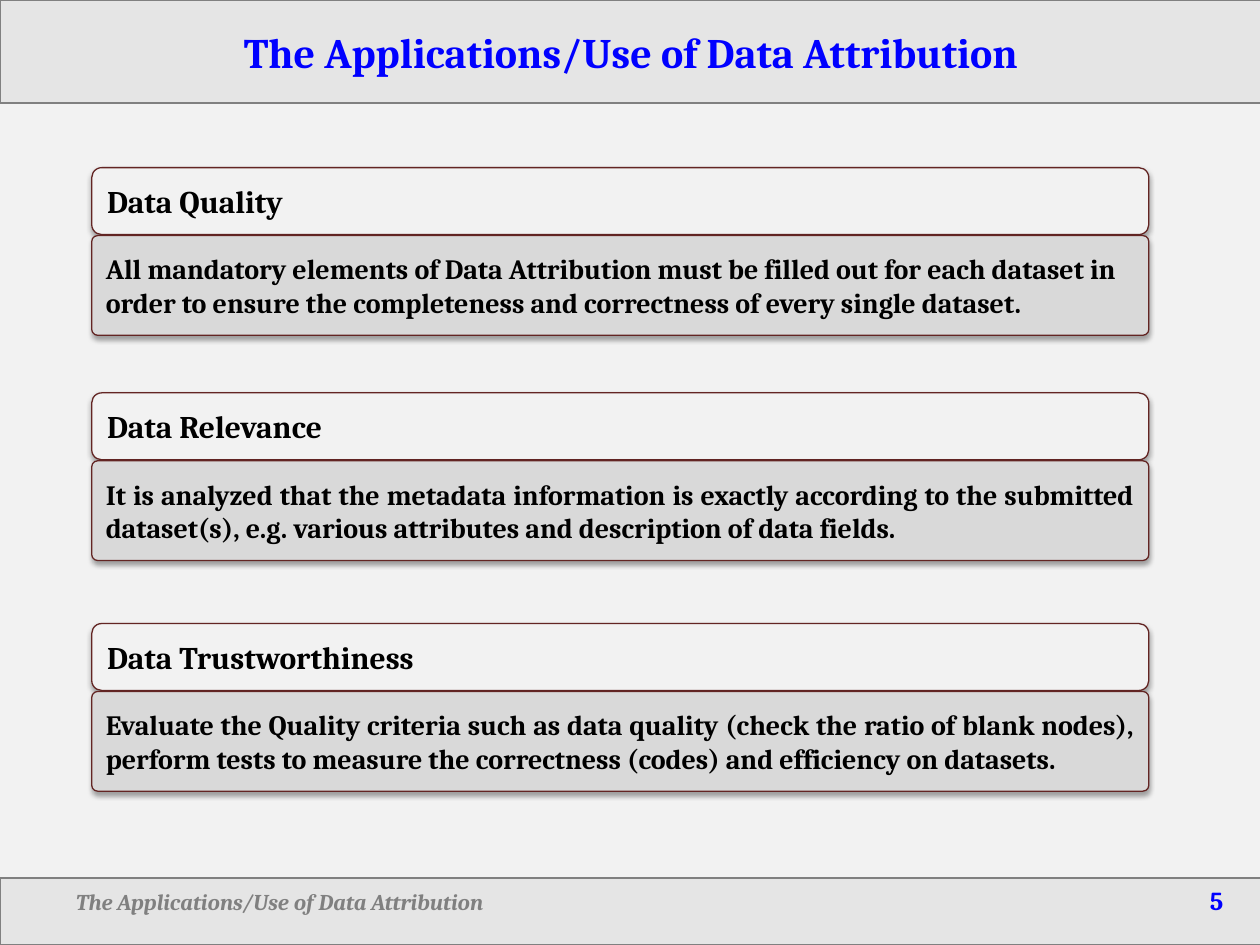
from lxml import etree
from pptx import Presentation
from pptx import util as u
from pptx.dml.color import RGBColor
from pptx.enum import shapes, text
from pptx.oxml.ns import qn

HEADING = "The Applications/Use of Data Attribution"
CRITERIA = [
    (3.38, "Data Quality", text.PP_ALIGN.LEFT,
     "All mandatory elements of Data Attribution must be filled out for each dataset in "
     "order to ensure the completeness and correctness of every single dataset."),
    (7.92, "Data Relevance", text.PP_ALIGN.JUSTIFY,
     "It is analyzed that the metadata information is exactly according to the submitted "
     "dataset(s), e.g. various attributes and description of data fields."),
    (12.57, "Data Trustworthiness", text.PP_ALIGN.JUSTIFY,
     "Evaluate the Quality criteria such as data quality (check the ratio of blank nodes), "
     "perform tests to measure the correctness (codes) and efficiency on datasets."),
]


def rgb(value):
    return RGBColor.from_string(value)


def child(parent, tag, **attributes):
    return etree.SubElement(parent, qn(tag), {k: str(v) for k, v in attributes.items()})


class Deck:
    font = "Cambria"
    band_width = 25.43
    card_left, card_width = 1.85, 21.31
    label_height, body_height, body_offset = 1.35, 2.01, 1.37

    def __init__(self):
        self.prs = Presentation()
        self.prs.slide_width, self.prs.slide_height = u.Cm(25.4), u.Cm(19.05)
        self.slide = self.prs.slides.add_slide(self.prs.slide_layouts[5])
        background = self.slide.background.fill
        background.solid()
        background.fore_color.rgb = rgb("F2F2F2")

    def style_run(self, run, size, color, italic=False):
        run.font.name = self.font
        run.font.size = u.Pt(size)
        run.font.bold = True
        run.font.italic = italic
        run.font.color.rgb = rgb(color)

    def paint(self, shape, fill, line):
        shape.shadow.inherit = False
        shape.fill.solid()
        shape.fill.fore_color.rgb = rgb(fill)
        shape.line.color.rgb = rgb(line)
        shape.line.width = u.Pt(0.75)

    def band(self, shape, top, height):
        shape.left, shape.top = u.Cm(0), u.Cm(top)
        shape.width, shape.height = u.Cm(self.band_width), u.Cm(height)
        self.paint(shape, "D9D9D9", "808080")
        color = shape.fill._xPr.find(qn("a:solidFill"))[0]
        child(color, "a:alpha", val=50000)

    def title(self, wording):
        title = self.slide.shapes.title
        self.band(title, 0, 2.08)
        frame = title.text_frame
        frame.text = wording
        frame.vertical_anchor = text.MSO_ANCHOR.MIDDLE
        frame.paragraphs[0].alignment = text.PP_ALIGN.CENTER
        self.style_run(frame.paragraphs[0].runs[0], 24, "0000FF")

    def footer(self, wording, number):
        footer = self.slide.shapes.add_shape(shapes.MSO_SHAPE.RECTANGLE, 0, 0, 0, 0)
        self.band(footer, 17.7, 1.35)
        frame = footer.text_frame
        frame.margin_left = u.Cm(1.53)
        frame.vertical_anchor = text.MSO_ANCHOR.TOP
        line = frame.paragraphs[0]
        line.alignment = text.PP_ALIGN.LEFT
        tabs = child(line._p.get_or_add_pPr(), "a:tabLst")
        child(tabs, "a:tab", pos=int(u.Cm(23.13)), algn="r")
        caption, page = line.add_run(), line.add_run()
        caption.text, page.text = wording + "\t", number
        self.style_run(caption, 12.9, "808080", italic=True)
        self.style_run(page, 14.8, "0000FF")

    def panel(self, top, height, corner, fill, wording, size, alignment):
        panel = self.slide.shapes.add_shape(
            shapes.MSO_SHAPE.ROUNDED_RECTANGLE,
            u.Cm(self.card_left), u.Cm(top), u.Cm(self.card_width), u.Cm(height))
        panel.adjustments[0] = corner
        self.paint(panel, fill, "632523")
        effects = panel._element.spPr.find(qn("a:effectLst"))
        shadow = child(effects, "a:outerShdw", blurRad=int(u.Pt(3.1)),
                       dist=int(u.Pt(1.8)), dir=5400000, rotWithShape=0)
        child(child(shadow, "a:srgbClr", val="000000"), "a:alpha", val=35000)
        frame = panel.text_frame
        frame.word_wrap = True
        frame.text = wording
        frame.vertical_anchor = text.MSO_ANCHOR.MIDDLE
        frame.paragraphs[0].alignment = alignment
        self.style_run(frame.paragraphs[0].runs[0], size, "000000")

    def card(self, top, label, alignment, body):
        self.panel(top, self.label_height, 0.15, "F2F2F2", label, 18, text.PP_ALIGN.LEFT)
        self.panel(top + self.body_offset, self.body_height, 0.06, "D9D9D9",
                   body, 16, alignment)


def main():
    deck = Deck()
    deck.title(HEADING)
    deck.footer(HEADING, "5")
    for criterion in CRITERIA:
        deck.card(*criterion)
    deck.prs.save("out.pptx")


if __name__ == "__main__":
    main()
